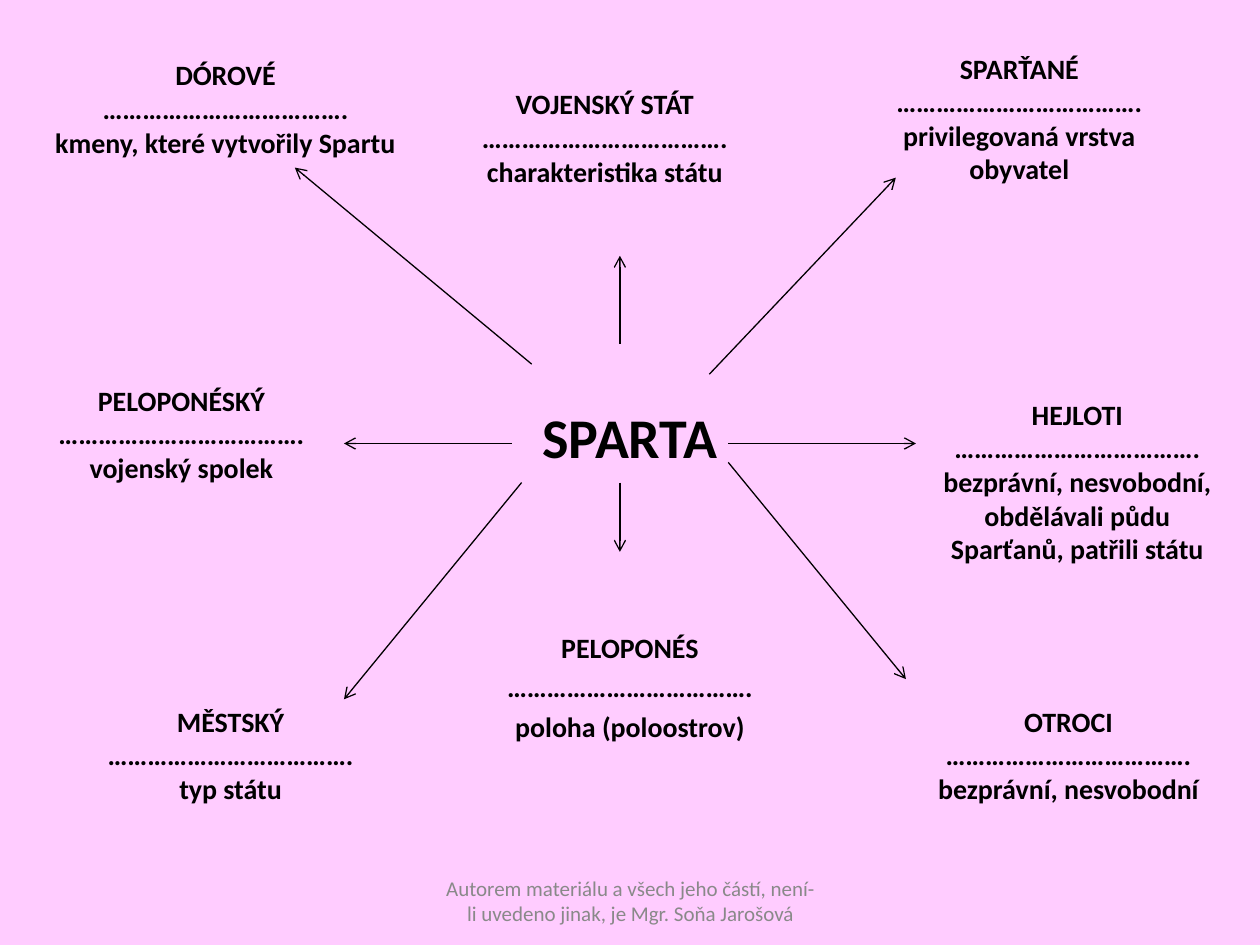
"""Build a one-slide mind map about Sparta."""
from lxml.etree import SubElement
from pptx import Presentation
from pptx.dml.color import RGBColor as Color
from pptx.enum.shapes import MSO_CONNECTOR as Connector
from pptx.enum.text import MSO_ANCHOR as Anchor, MSO_AUTO_SIZE as AutoSize, PP_ALIGN as Align
from pptx.oxml.ns import qn
from pptx.util import Inches, Pt

COLORS = {"background": "FFCCFF", "ink": "000000", "footer": "898989"}
FONT = "Calibri"
BLANK = "…" * 12 + "."
TITLE_TOPIC = (0.23, 0.39, 3.12, 0.94), ("DÓROVÉ", BLANK, "kmeny, které vytvořily Spartu")
TOPICS = [
    (3.59, 0.62, "VOJENSKÝ STÁT", "charakteristika státu"),
    (6.88, 0.47, "SPARŤANÉ", "privilegovaná vrstva obyvatel"),
    (7.34, 3.35, "HEJLOTI", "bezprávní, nesvobodní, obdělávali půdu Sparťanů, patřili státu"),
    (7.27, 5.52, "OTROCI", "bezprávní, nesvobodní"),
    (0.23, 2.97, "PELOPONÉSKÝ", "vojenský spolek"),
    (0.62, 5.52, "MĚSTSKÝ", "typ státu"),
]
ARROWS = [
    (4.92, 3.83, 4.92, 4.38),
    (5.78, 3.67, 7.19, 5.39),
    (5.78, 3.52, 7.27, 3.52),
    (4.06, 3.52, 2.73, 3.52),
    (4.14, 3.83, 2.73, 5.55),
    (4.92, 2.73, 4.92, 2.03),
    (4.22, 2.89, 2.34, 1.33),
    (5.63, 2.97, 7.11, 1.41),
]


def write(frame, lines, size=16, color="ink", bold=True, space=0):
    """Fill a text frame with centred paragraphs."""
    frame.word_wrap = True
    frame.auto_size = AutoSize.NONE
    frame.vertical_anchor = Anchor.MIDDLE
    for index, line in enumerate(lines):
        para = frame.paragraphs[0] if index == 0 else frame.add_paragraph()
        para.alignment = Align.CENTER
        para.space_before = Pt(space)
        span = para.add_run()
        span.text = line
        span.font.name = FONT
        span.font.size = Pt(size)
        span.font.bold = bold
        span.font.color.rgb = Color.from_string(COLORS[color])


class MindMap:
    """Hold the slide and draw its elements in one style."""

    def __init__(self, deck):
        """Add a title-only slide with a plain background."""
        self.page = deck.slides.add_slide(deck.slide_layouts[5])
        fill = self.page.background.fill
        fill.solid()
        fill.fore_color.rgb = Color.from_string(COLORS["background"])

    def title(self, place, lines):
        """Move and fill the title placeholder."""
        box = self.page.shapes.title
        box.left, box.top, box.width, box.height = map(Inches, place)
        write(box.text_frame, lines)

    def text(self, place, lines, **style):
        """Add a text box."""
        box = self.page.shapes.add_textbox(*map(Inches, place))
        write(box.text_frame, lines, **style)

    def arrow(self, ends):
        """Add a thin line with an open arrowhead at its end."""
        line = self.page.shapes.add_connector(Connector.STRAIGHT, *map(Inches, ends))
        line.line.color.rgb = Color.from_string(COLORS["ink"])
        line.line.width = Pt(0.75)
        SubElement(line.line._get_or_add_ln(), qn("a:tailEnd"), type="arrow")
        SubElement(line._element.spPr, qn("a:effectLst"))


def main():
    """Draw the mind map and save it."""
    deck = Presentation()
    deck.slide_width, deck.slide_height = Inches(10), Inches(7.5)
    sparta = MindMap(deck)
    sparta.text((4, 3.11, 2, 0.7), ["SPARTA"], size=32)
    sparta.text((3.5, 4.9, 3, 1.1), ["PELOPONÉS", BLANK, "poloha (poloostrov)"], space=3.2)
    sparta.text(
        (3.42, 6.95, 3.17, 0.4),
        ["Autorem materiálu a všech jeho částí, není-li uvedeno jinak, je Mgr. Soňa Jarošová"],
        size=12, color="footer", bold=False,
    )
    for ends in ARROWS:
        sparta.arrow(ends)
    sparta.title(*TITLE_TOPIC)
    for left, top, name, hint in TOPICS:
        sparta.text((left, top, 2.42, 0.94), [name, BLANK, hint])
    deck.save("out.pptx")


if __name__ == "__main__":
    main()
